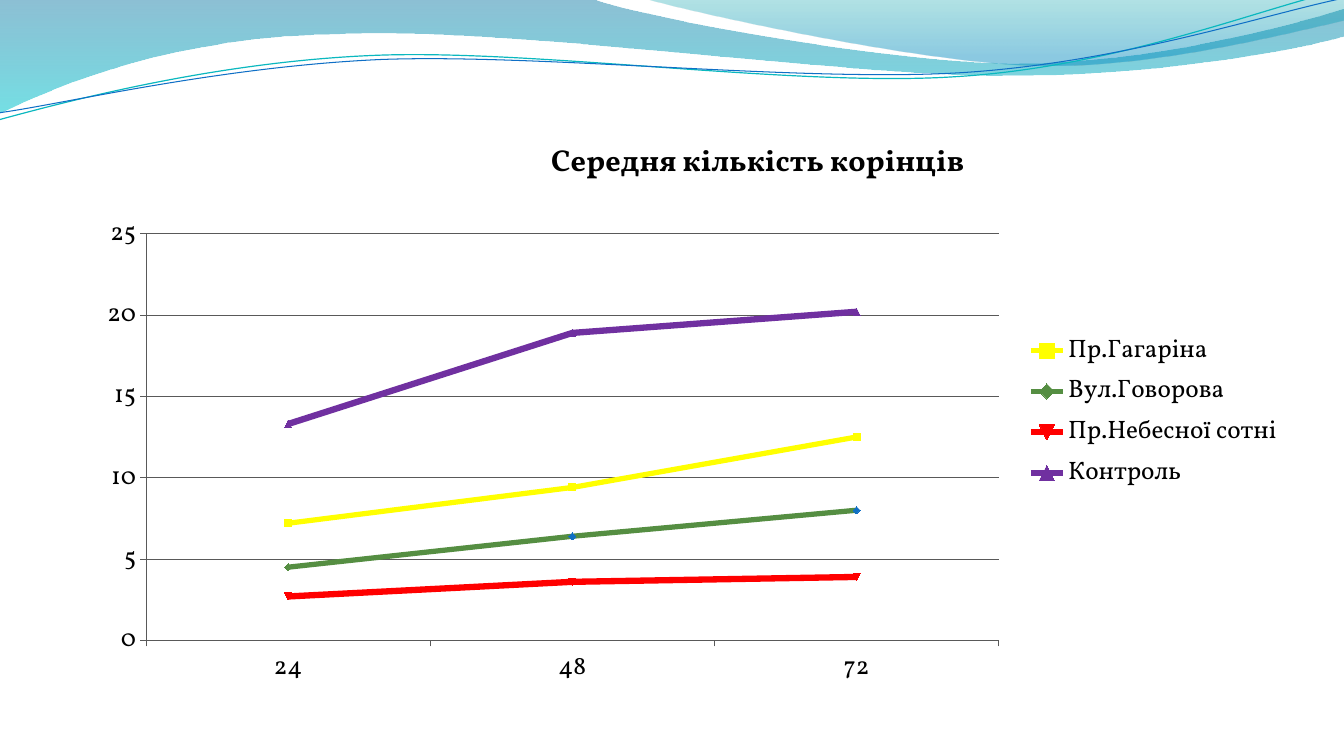
from lxml.etree import SubElement
from pptx import Presentation
from pptx.chart.data import CategoryChartData
from pptx.dml.color import RGBColor
from pptx.enum.chart import XL_CHART_TYPE, XL_LEGEND_POSITION, XL_MARKER_STYLE, XL_TICK_MARK
from pptx.oxml import parse_xml
from pptx.oxml.ns import nsdecls, qn
from pptx.util import Cm, Pt

FONT = "Vollkorn"
AXIS_COLOR = "595959"
CHART_WIDTH, CHART_HEIGHT = 30.48, 14.4
HOURS = ["24", "48", "72"]
SERIES = [
    ("Пр.Гагаріна", [7.2, 9.4, 12.5], "FFFF00", 3.75),
    ("Вул.Говорова", [4.5, 6.4, 8], "558E42", 3.75),
    ("Пр.Небесної сотні", [2.7, 3.6, 3.9], "FF0000", 4.5),
    ("Контроль", [13.3, 18.9, 20.2], "7030A0", 4.5),
]
GOVOROVA_INDEX = 1
BLUE_MARKER = "0F6FC6"

WIDE_WAVE = [
    (0, 0), (14.91, -0.03),
    (16.1, 0.43, 22.48, 1.6, 25.68, 1.6),
    (28.91, 1.6, 32.46, 0.66, 33.86, 0.23),
    (33.91, 0.91),
    (33.3, 1.12, 29.46, 1.93, 25.25, 1.91),
    (21.06, 1.91, 12.93, 0.71, 8.71, 0.86),
    (4.37, 0.91, 1.55, 2.11, -0.03, 2.87),
    (0, 0),
]
RIGHT_WAVE = [
    (16.23, -0.03),
    (17.25, 0.28, 23.09, 1.57, 26.04, 1.65),
    (28.98, 1.75, 32.56, 0.81, 33.86, 0.53),
    (33.86, 0), (16.23, -0.03),
]
TEAL_CURVE = [
    (-0.03, 3.02),
    (1.63, 2.57, 5.36, 1.57, 9.37, 1.4),
    (13.39, 1.22, 20.07, 2.21, 24.13, 1.93),
    (28.19, 1.68, 31.8, 0.2, 33.81, -0.25),
]
BLUE_CURVE = [
    (0, 2.84),
    (1.6, 2.62, 5.54, 1.68, 9.6, 1.5),
    (13.64, 1.35, 20.22, 2.08, 24.26, 1.83),
    (28.32, 1.57, 31.88, 0.36, 33.88, -0.05),
]


def color(value):
    """Turn a hex string into a colour."""
    return RGBColor.from_string(value)


def add_outline(page, segments, close):
    """Draw a freeform from straight and cubic segments in centimetres."""
    places = [(Cm(segment[i]), Cm(segment[i + 1]))
              for segment in segments for i in range(0, len(segment), 2)]
    builder = page.shapes.build_freeform(*places[0])
    builder.add_line_segments(places[1:], close=close)
    shape = builder.convert_to_shape()
    shape.shadow.inherit = False
    steps = iter(list(shape._element.iter(qn("a:lnTo"))))
    for segment in segments[1:]:
        step = next(steps)
        if len(segment) == 6:
            step.tag = qn("a:cubicBezTo")
            for extra in (next(steps), next(steps)):
                step.append(extra[0])
                extra.getparent().remove(extra)
    return shape


def add_wave(page, segments, stops):
    """Draw a closed wave with a translucent downward gradient."""
    shape = add_outline(page, segments, True)
    shape.line.fill.background()
    shape.fill.gradient()
    shape.fill.gradient_angle = 270
    for stop, (position, value, opacity) in zip(shape.fill.gradient_stops, stops):
        stop.position = position
        stop.color.rgb = color(value)
    tints = shape._element.iter(qn("a:srgbClr"))
    for tint, (position, value, opacity) in zip(tints, stops):
        SubElement(tint, qn("a:alpha"), val=str(opacity * 1000))


def add_curve(page, segments, value, width):
    """Draw an open thin curve."""
    shape = add_outline(page, segments, False)
    shape.fill.background()
    set_line(shape.line, value, width)


def set_line(line, value, width):
    """Give a line its colour and width."""
    line.color.rgb = color(value)
    line.width = Pt(width)


def set_marker(marker, value):
    """Give a marker its size and fill."""
    marker.style = XL_MARKER_STYLE.AUTOMATIC
    marker.size = 5
    marker.format.fill.solid()
    marker.format.fill.fore_color.rgb = color(value)
    set_line(marker.format.line, value, 0.75)


def set_layout(parent, index, left, top, **values):
    """Place a chart part, measured in fractions of the chart area."""
    for old in parent.findall(qn("c:layout")):
        parent.remove(old)
    layout = parse_xml(f'<c:layout {nsdecls("c")}><c:manualLayout/></c:layout>')
    values = {"xMode": "edge", "yMode": "edge", "x": left, "y": top, **values}
    for name, value in values.items():
        SubElement(layout[0], qn(f"c:{name}"), val=str(value))
    parent.insert(index, layout)


def style_axis(axis):
    """Set the ticks and line of an axis."""
    axis.major_tick_mark = XL_TICK_MARK.OUTSIDE
    axis.minor_tick_mark = XL_TICK_MARK.NONE
    set_line(axis.format.line, AXIS_COLOR, 0.5)


def style_series(chart):
    """Colour the lines and markers."""
    for series, (name, values, value, width) in zip(chart.plots[0].series, SERIES):
        series.smooth = False
        set_line(series.format.line, value, width)
        set_marker(series.marker, value)
    govorova = chart.plots[0].series[GOVOROVA_INDEX]
    for index in (1, 2):
        point = govorova.points[index]
        set_line(point.format.line, BLUE_MARKER, SERIES[GOVOROVA_INDEX][3])
        set_marker(point.marker, BLUE_MARKER)


def add_title(chart, text):
    """Write the chart title in bold."""
    chart.has_title = True
    title = chart.chart_title
    title.include_in_layout = False
    title.text_frame.text = text
    font = title.text_frame.paragraphs[0].runs[0].font
    font.name, font.size, font.bold = FONT, Pt(21.6), True
    font.color.rgb = color("000000")
    set_layout(title._element, 1, 11.64 / CHART_WIDTH, 0.18 / CHART_HEIGHT)


def add_roots_chart(page):
    """Add the line chart of the mean number of roots."""
    data = CategoryChartData()
    data.categories = HOURS
    for name, values, value, width in SERIES:
        data.add_series(name, values)
    frame = page.shapes.add_chart(
        XL_CHART_TYPE.LINE_MARKERS, Cm(2.11), Cm(3.18), Cm(CHART_WIDTH), Cm(CHART_HEIGHT), data)
    chart = frame.chart
    chart.font.name, chart.font.size = FONT, Pt(18)
    chart.font.color.rgb = color("000000")
    chart.plots[0].vary_by_categories = False
    add_title(chart, "Середня кількість корінців")
    style_axis(chart.category_axis)
    style_axis(chart.value_axis)
    chart.value_axis.minimum_scale = 0
    chart.value_axis.maximum_scale = 25
    chart.value_axis.major_unit = 5
    chart.value_axis.has_major_gridlines = True
    set_line(chart.value_axis.major_gridlines.format.line, AXIS_COLOR, 0.5)
    chart.has_legend = True
    chart.legend.position = XL_LEGEND_POSITION.RIGHT
    chart.legend.include_in_layout = False
    style_series(chart)
    plot_area = chart._chartSpace.find(f'.//{qn("c:plotArea")}')
    set_layout(plot_area, 0, 1.57 / CHART_WIDTH, 2.71 / CHART_HEIGHT,
               w=21.49 / CHART_WIDTH, h=10.25 / CHART_HEIGHT)
    plot_area[0][0].insert(0, parse_xml(f'<c:layoutTarget {nsdecls("c")} val="inner"/>'))


def main():
    """Build the slide and save it."""
    deck = Presentation()
    deck.slide_width, deck.slide_height = Cm(33.87), Cm(19.05)
    page = deck.slides.add_slide(deck.slide_layouts[6])
    add_wave(page, WIDE_WAVE, [(0, "0074A1", 45), (1, "00C6CF", 55)])
    add_wave(page, RIGHT_WAVE, [(0, "00A1A9", 30), (0.8, "008BBF", 45)])
    add_curve(page, TEAL_CURVE, "0AB8BF", 0.85)
    add_curve(page, BLUE_CURVE, "0F6FC6", 0.75)
    add_roots_chart(page)
    deck.save("out.pptx")


if __name__ == "__main__":
    main()
